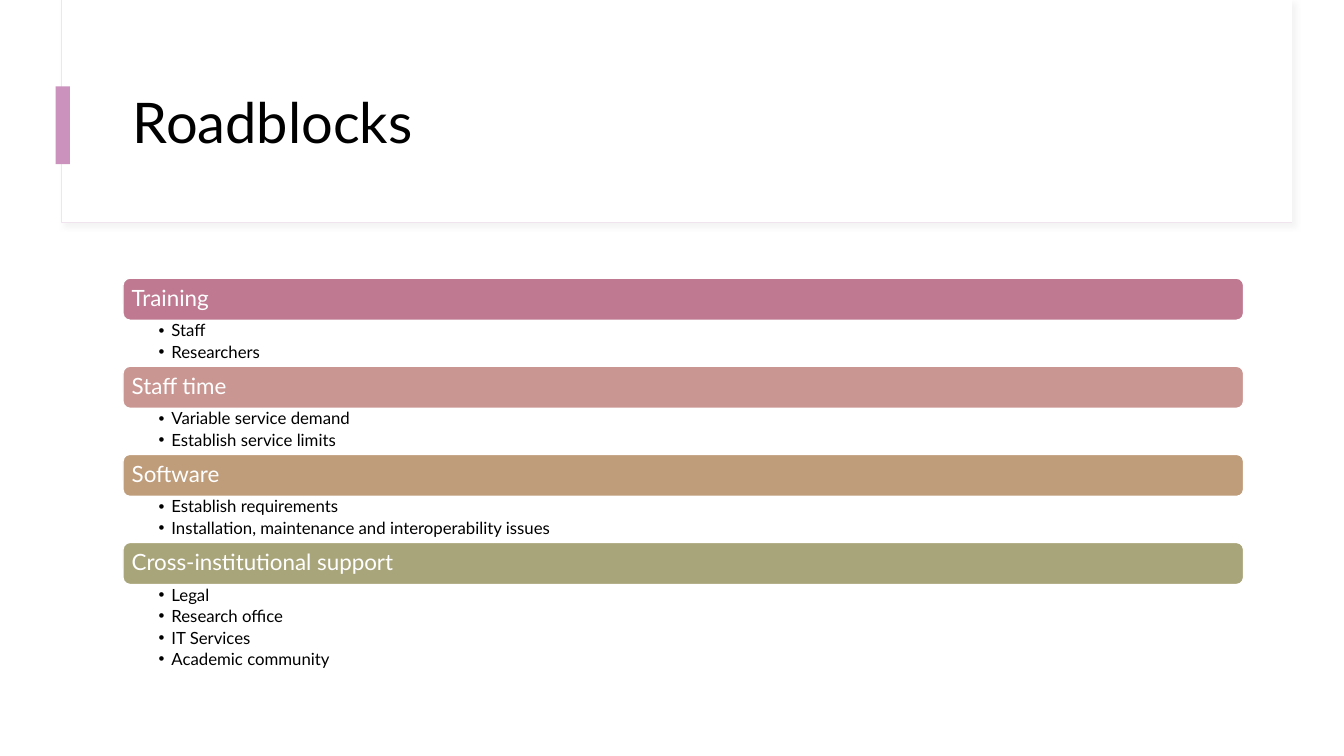
from lxml import etree
from pptx import Presentation
from pptx.dml.color import RGBColor
from pptx.enum.shapes import MSO_SHAPE
from pptx.enum.text import MSO_ANCHOR, MSO_AUTO_SIZE, PP_ALIGN
from pptx.oxml.ns import qn
from pptx.util import Cm, Pt

RECT, ROUNDED = MSO_SHAPE.RECTANGLE, MSO_SHAPE.ROUNDED_RECTANGLE
TOP, MIDDLE = MSO_ANCHOR.TOP, MSO_ANCHOR.MIDDLE
LEFT = PP_ALIGN.LEFT
NO_AUTOFIT = MSO_AUTO_SIZE.NONE

FONT = "Lato"
COLORS = {
    "white": "FFFFFF",
    "black": "000000",
    "border": "F0E5EE",
    "shadow": "D9D9D9",
    "accent": "CA92BD",
    "training": "BF7A91",
    "time": "CA9692",
    "software": "BF9C7A",
    "support": "A9A57A",
}
ROADBLOCKS = [
    ("Training", "training", ["Staff", "Researchers"]),
    ("Staff time", "time", ["Variable service demand", "Establish service limits"]),
    ("Software", "software",
     ["Establish requirements", "Installation, maintenance and interoperability issues"]),
    ("Cross-institutional support", "support",
     ["Legal", "Research office", "IT Services", "Academic community"]),
]
CONTENT_LEFT, CONTENT_WIDTH = 3.1, 28.24
FIRST_TOP, HEADING_HEIGHT, ITEM_HEIGHT = 7.01, 1.06, 0.58


def rgb(name):
    """Return the named colour."""
    return RGBColor.from_string(COLORS[name])


def place(shape, left, top, width, height):
    """Set position and size in centimetres."""
    shape.left, shape.top = Cm(left), Cm(top)
    shape.width, shape.height = Cm(width), Cm(height)


def add_block(slide, kind, box, fill, line=None, line_width=1):
    """Add a filled shape, outlined only if a line colour is given."""
    block = slide.shapes.add_shape(kind, *(Cm(length) for length in box))
    block.shadow.inherit = False
    block.fill.solid()
    block.fill.fore_color.rgb = rgb(fill)
    if line:
        block.line.color.rgb = rgb(line)
        block.line.width = Pt(line_width)
    else:
        block.line.fill.background()
    return block


def add_soft_shadow(block):
    """Give a block a faint shadow towards the lower right."""
    effects = block.element.spPr.find(qn("a:effectLst"))
    shadow = etree.SubElement(effects, qn("a:outerShdw"), blurRad=str(Pt(4)),
                              dist=str(Pt(3)), dir="2700000", algn="tl", rotWithShape="0")
    color = etree.SubElement(shadow, qn("a:srgbClr"), val=COLORS["shadow"])
    etree.SubElement(color, qn("a:alpha"), val="30000")


def set_frame(frame, anchor, insets):
    """Set anchor and left, top, right and bottom insets of a text frame."""
    frame.word_wrap = True
    frame.auto_size = NO_AUTOFIT
    frame.vertical_anchor = anchor
    (frame.margin_left, frame.margin_top,
     frame.margin_right, frame.margin_bottom) = (Cm(inset) for inset in insets)


def write(paragraph, text, size, color, space_after=0):
    """Write one left-aligned run into a paragraph."""
    paragraph.alignment = LEFT
    paragraph.line_spacing = 0.9
    paragraph.space_before = Pt(0)
    paragraph.space_after = Pt(space_after)
    run = paragraph.add_run()
    run.text = text
    run.font.name = FONT
    run.font.size = Pt(size)
    run.font.bold = False
    run.font.color.rgb = rgb(color)


def add_bullet(paragraph):
    """Give a paragraph a round bullet with a hanging indent."""
    properties = paragraph._p.get_or_add_pPr()
    properties.set("marL", str(Cm(0.32)))
    properties.set("indent", str(Cm(-0.32)))
    etree.SubElement(properties, qn("a:buFont"), typeface="Arial")
    etree.SubElement(properties, qn("a:buChar"), char="•")


def add_title_panel(slide, title):
    """Put the bordered panel and accent bar behind the title."""
    panel = add_block(slide, RECT, (1.55, 0, 31.01, 5.61), "white", "border", 0.75)
    add_soft_shadow(panel)
    face = add_block(slide, RECT, (1.57, 0, 30.99, 5.59), "white")
    accent = add_block(slide, RECT, (1.4, 2.18, 0.36, 1.96), "accent")
    for part in (panel, face, accent):
        title.element.addprevious(part.element)


def fill_title(title, text):
    """Place and write the slide title."""
    place(title, CONTENT_LEFT, 1.52, CONTENT_WIDTH, 3.28)
    set_frame(title.text_frame, MIDDLE, (0.25, 0.13, 0.25, 0.13))
    write(title.text_frame.paragraphs[0], text, 40, "black")


def add_heading(slide, top, text, color):
    """Add the coloured bar that names a roadblock."""
    box = (CONTENT_LEFT, top, CONTENT_WIDTH, HEADING_HEIGHT)
    heading = add_block(slide, ROUNDED, box, color, "white")
    set_frame(heading.text_frame, MIDDLE, (0.17,) * 4)
    write(heading.text_frame.paragraphs[0], text, 16, "white")


def fill_list(body, top, height, items):
    """Place a body placeholder and write its bulleted items."""
    place(body, CONTENT_LEFT, top, CONTENT_WIDTH, height)
    frame = body.text_frame
    set_frame(frame, TOP, (0.9, 0.05, 0.3, 0.05))
    for index, item in enumerate(items):
        paragraph = frame.add_paragraph() if index else frame.paragraphs[0]
        paragraph.level = 1
        write(paragraph, item, 12, "black", space_after=2.4)
        add_bullet(paragraph)


def main():
    """Build the roadblocks slide."""
    deck = Presentation()
    deck.slide_width, deck.slide_height = Cm(33.87), Cm(19.05)
    slide = deck.slides.add_slide(deck.slide_layouts.get_by_name("Comparison"))
    title, *bodies = slide.placeholders
    add_title_panel(slide, title)
    fill_title(title, "Roadblocks")
    top = FIRST_TOP
    for body, (name, color, items) in zip(bodies, ROADBLOCKS):
        add_heading(slide, top, name, color)
        top += HEADING_HEIGHT
        height = ITEM_HEIGHT * len(items)
        fill_list(body, top, height, items)
        top += height
    deck.save("out.pptx")


if __name__ == "__main__":
    main()
